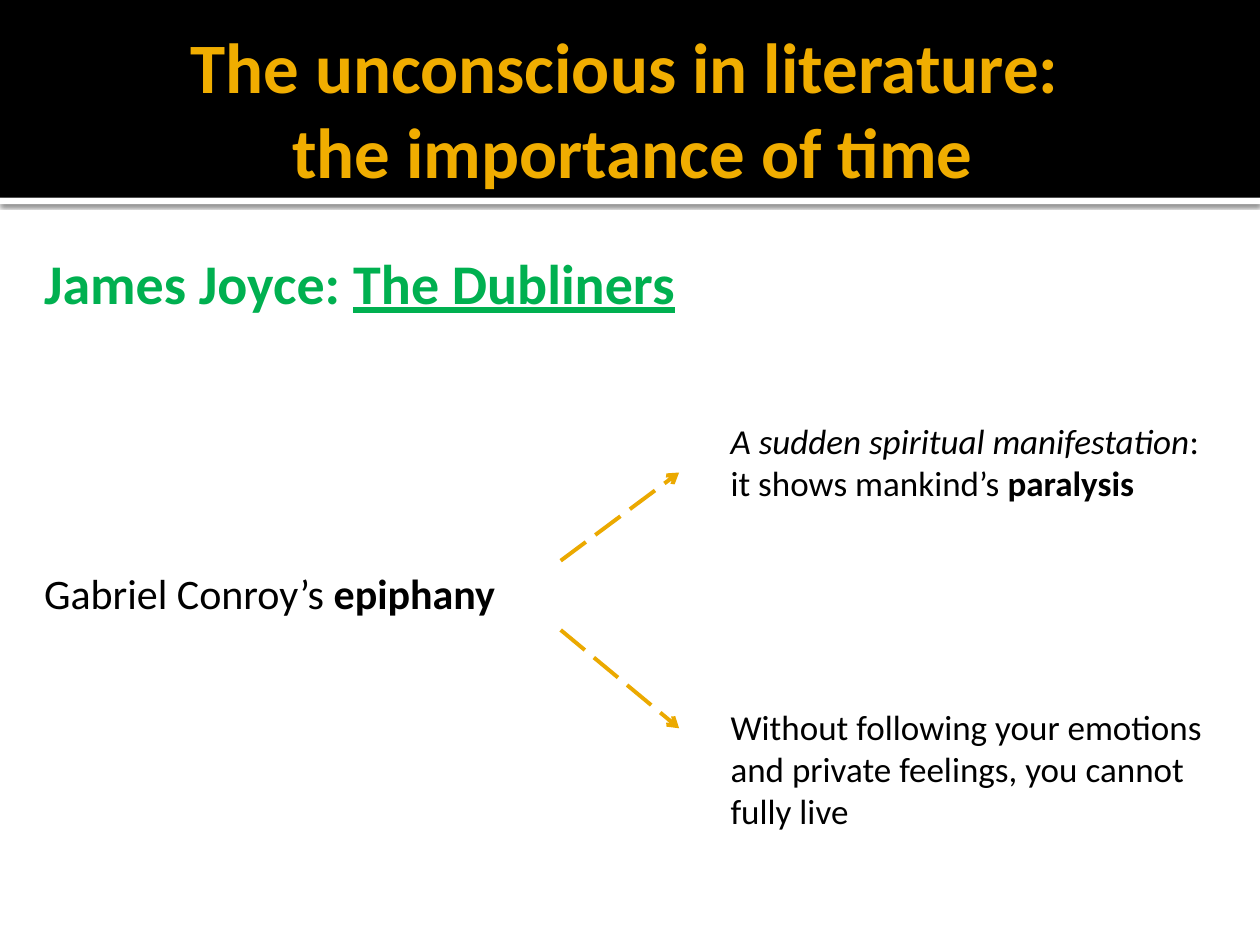
from lxml import etree
from pptx import Presentation
from pptx import util as u
from pptx.dml.color import RGBColor
from pptx.enum import dml, shapes, text
from pptx.oxml.ns import qn

WIDTH, HEIGHT = 10, 7.5
BLACK, WHITE, GOLD, AMBER, GREEN = "000000", "FFFFFF", "F0AD00", "EBA900", "00B050"
BANNER_HEIGHT = 1.57
NOTE_LEFT = 0.57 * WIDTH
ARROW_START, ARROW_END = 4.45, 5.39


def color(hex_code):
    return RGBColor.from_string(hex_code)


def add_band(slide, top, height, fill):
    """Full-width bar without an outline."""
    band = slide.shapes.add_shape(
        shapes.MSO_SHAPE.RECTANGLE, 0, u.Inches(top), u.Inches(WIDTH), u.Inches(height))
    band.shadow.inherit = False
    band.fill.solid()
    band.fill.fore_color.rgb = color(fill)
    band.line.fill.background()
    return band


def add_soft_shadow(band):
    effects = band._element.spPr.find(qn("a:effectLst"))
    shadow = etree.SubElement(
        effects, qn("a:outerShdw"), blurRad=str(u.Pt(2.5)), dist=str(u.Pt(0.8)),
        dir="5400000", algn="tl", rotWithShape="0")
    tint = etree.SubElement(shadow, qn("a:srgbClr"), val=BLACK)
    etree.SubElement(tint, qn("a:alpha"), val="60000")


def add_text(slide, box, paragraphs, size=20, fill=BLACK, align=text.PP_ALIGN.LEFT,
             anchor=text.MSO_ANCHOR.TOP, insets=(0.1, 0.05, 0.1, 0.05), gap=0):
    """Each paragraph is a list of (wording, format) runs; gap parts paragraphs."""
    frame = slide.shapes.add_textbox(*map(u.Inches, box)).text_frame
    frame.word_wrap = True
    frame.vertical_anchor = anchor
    (frame.margin_left, frame.margin_top,
     frame.margin_right, frame.margin_bottom) = map(u.Inches, insets)
    for number, runs in enumerate(paragraphs):
        paragraph = frame.add_paragraph() if number else frame.paragraphs[0]
        paragraph.alignment = align
        if number:
            paragraph.space_before = u.Pt(gap)
        for wording, style in runs:
            for row, line in enumerate(wording.split("\n")):
                if row:
                    paragraph.add_line_break()
                run = paragraph.add_run()
                run.text = line
                font = run.font
                font.name = "Calibri"
                font.size = u.Pt(style.get("size", size))
                font.color.rgb = color(style.get("fill", fill))
                font.bold = style.get("bold", False)
                font.italic = style.get("italic", False)
                font.underline = style.get("underline", False)


def add_dashed_arrow(slide, start_y, end_y):
    arrow = slide.shapes.add_connector(
        shapes.MSO_CONNECTOR.STRAIGHT,
        *map(u.Inches, (ARROW_START, start_y, ARROW_END, end_y)))
    arrow.line.color.rgb = color(AMBER)
    arrow.line.width = u.Pt(2.25)
    arrow.line.dash_style = dml.MSO_LINE.LONG_DASH
    etree.SubElement(arrow.line._get_or_add_ln(), qn("a:tailEnd"), type="arrow")
    etree.SubElement(arrow._element.spPr, qn("a:effectLst"))


def main():
    deck = Presentation()
    deck.slide_width, deck.slide_height = u.Inches(WIDTH), u.Inches(HEIGHT)
    slide = deck.slides.add_slide(deck.slide_layouts[6])

    # Banner and title
    add_soft_shadow(add_band(slide, BANNER_HEIGHT, 0.05, WHITE))
    add_band(slide, 0, BANNER_HEIGHT, BLACK)
    add_text(slide, (0.5, 0.17, 0.9 * WIDTH, 1.37),
             [[("The unconscious in literature: \nthe importance of time", {"bold": True})]],
             size=40.5, fill=GOLD, align=text.PP_ALIGN.CENTER,
             anchor=text.MSO_ANCHOR.MIDDLE, insets=(0.1, 0.05, 0.05, 0.05))

    # Work and its key moment
    heading = {"size": 32, "fill": GREEN, "bold": True}
    add_text(slide, (0.16, 1.87, 9.16, 5.21),
             [[("James Joyce: ", heading),
               ("The Dubliners", {**heading, "underline": True})],
              [("Gabriel Conroy’s ", {}), ("epiphany", {"bold": True})]],
             size=24, insets=(0.19, 0.1, 0.1, 0.05), gap=144)

    # What the epiphany means
    add_text(slide, (NOTE_LEFT, 3.28, 3.98, 0.77),
             [[("A sudden spiritual manifestation", {"italic": True}),
               (": it shows mankind’s ", {}), ("paralysis", {"bold": True})]])
    add_text(slide, (NOTE_LEFT, 5.55, 4.06, 1.11),
             [[("Without following your emotions and private feelings, "
                "you cannot fully live", {})]])

    # Arrows from the epiphany to its meanings
    add_dashed_arrow(slide, 5, 5.78)
    add_dashed_arrow(slide, 4.45, 3.75)

    deck.save("out.pptx")


if __name__ == "__main__":
    main()
